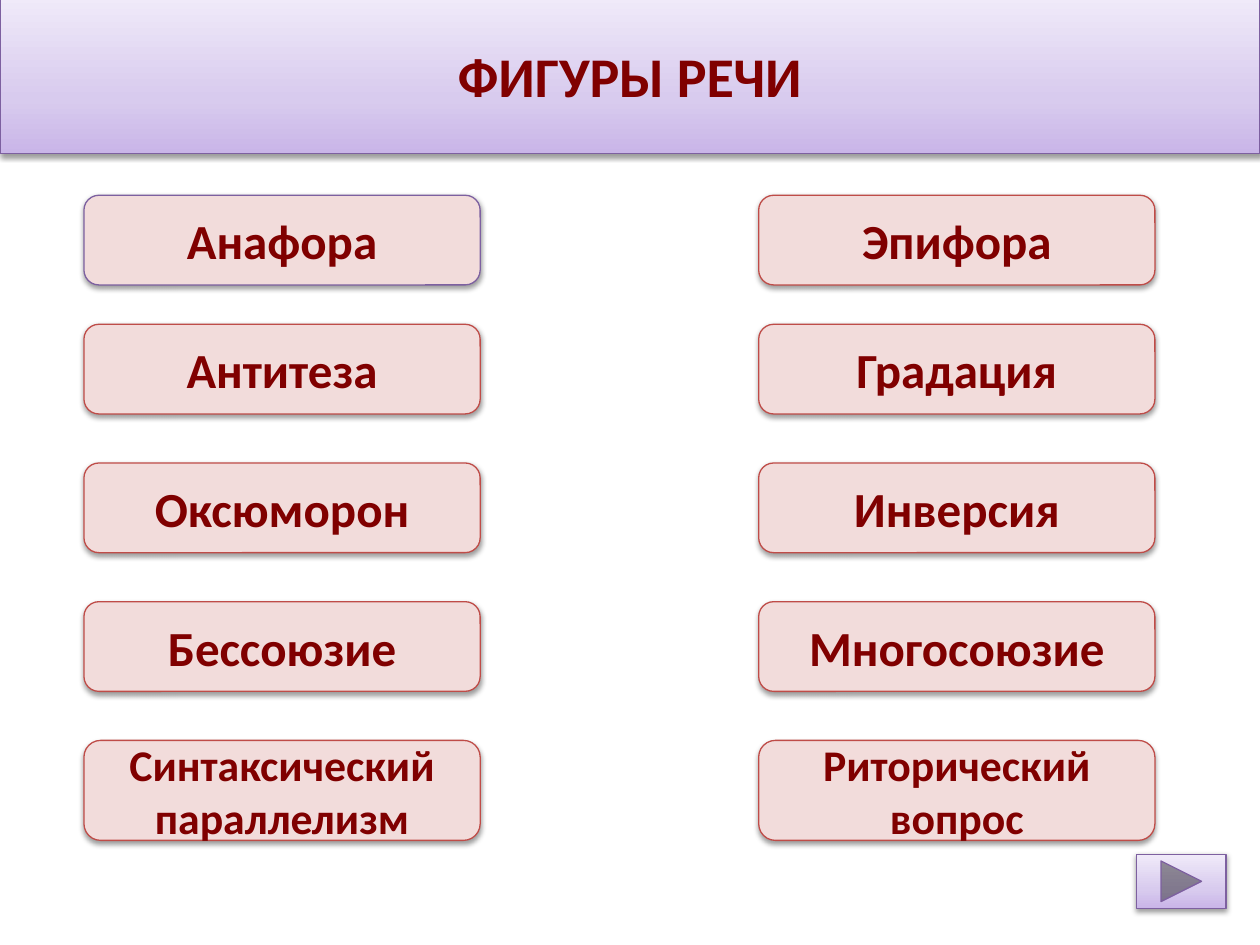
from copy import deepcopy

from lxml.etree import SubElement
from pptx import Presentation
from pptx.dml.color import RGBColor
from pptx.enum.shapes import MSO_SHAPE as Preset
from pptx.enum.text import MSO_ANCHOR as Anchor, PP_ALIGN as Align
from pptx.oxml.ns import qn
from pptx.util import Inches, Pt

COLORS = {
    "text": "800000",
    "violet_line": "7D60A0",
    "red_line": "BF4C48",
    "term_fill": "F2DCDB",
    "shadow": "000000",
}
VIOLET_STOPS = [(0, "C9B5E8"), (0.35, "D8CBEE"), (1, "F0EAF9")]

WIDTH, HEIGHT = 10, 7.5
TERMS = [
    ("Анафора", "Эпифора"),
    ("Антитеза", "Градация"),
    ("Оксюморон", "Инверсия"),
    ("Бессоюзие", "Многосоюзие"),
    ("Синтаксический параллелизм", "Риторический вопрос"),
]


def add_panel(slide, preset, box, line):
    """Outlined shape with a soft shadow falling straight down."""
    panel = slide.shapes.add_shape(preset, *(Inches(length) for length in box))
    panel.line.color.rgb = RGBColor.from_string(COLORS[line])
    panel.line.width = Pt(0.75)
    panel.shadow.inherit = False
    effects = panel._element.spPr.find(qn("a:effectLst"))
    shadow = SubElement(effects, qn("a:outerShdw"), blurRad=str(Pt(3.1)),
                        dist=str(Pt(1.6)), dir="5400000", rotWithShape="0")
    tint = SubElement(shadow, qn("a:srgbClr"), val=COLORS["shadow"])
    SubElement(tint, qn("a:alpha"), val="38000")
    return panel


def fill_violet(panel):
    """Three-stop gradient, dark at the bottom."""
    panel.fill.gradient()
    panel.fill.gradient_angle = 90
    stop_list = panel._element.spPr.find(qn("a:gradFill")).find(qn("a:gsLst"))
    stop_list.append(deepcopy(stop_list[0]))
    for stop, (position, color) in zip(panel.fill.gradient_stops, VIOLET_STOPS):
        stop.position = position
        stop.color.rgb = RGBColor.from_string(color)


def write(panel, words, size):
    frame = panel.text_frame
    frame.text = words
    frame.word_wrap = True
    frame.vertical_anchor = Anchor.MIDDLE
    paragraph = frame.paragraphs[0]
    paragraph.alignment = Align.CENTER
    font = paragraph.runs[0].font
    font.name, font.size, font.bold = "Calibri", Pt(size), True
    font.color.rgb = RGBColor.from_string(COLORS["text"])


def add_header(slide, box):
    header = add_panel(slide, Preset.RECTANGLE, box, "violet_line")
    fill_violet(header)
    write(header, "ФИГУРЫ РЕЧИ", 32)


def add_terms(slide, box):
    """Two columns of terms; the last row is taller and holds two lines."""
    left, top, width, height = box
    term_width = width * 0.37
    column_lefts = (left, left + width - term_width)
    row_shares = (0, 0.2, 0.415, 0.63, 0.845)
    for row, pair in enumerate(TERMS):
        last = row == len(TERMS) - 1
        term_height = height * (0.155 if last else 0.139)
        for column, term in enumerate(pair):
            line = "violet_line" if row == column == 0 else "red_line"
            term_box = (column_lefts[column], top + height * row_shares[row],
                        term_width, term_height)
            button = add_panel(slide, Preset.FLOWCHART_ALTERNATE_PROCESS,
                               term_box, line)
            button.fill.solid()
            button.fill.fore_color.rgb = RGBColor.from_string(COLORS["term_fill"])
            write(button, term, 25 if last else 28)


def add_next_button(slide, box):
    fill_violet(add_panel(slide, Preset.ACTION_BUTTON_FORWARD_OR_NEXT, box,
                          "violet_line"))


def main():
    deck = Presentation()
    deck.slide_width, deck.slide_height = Inches(WIDTH), Inches(HEIGHT)
    slide = deck.slides.add_slide(deck.slide_layouts[6])

    # Title band across the top
    add_header(slide, (0, -0.03, WIDTH, HEIGHT / 6))
    # Grid of terms
    add_terms(slide, (WIDTH / 15, 1.55, WIDTH * 0.85, 5.12))
    # Forward button in the corner
    add_next_button(slide, (9.02, 6.78, 0.71, 0.43))

    deck.save("out.pptx")


if __name__ == "__main__":
    main()
